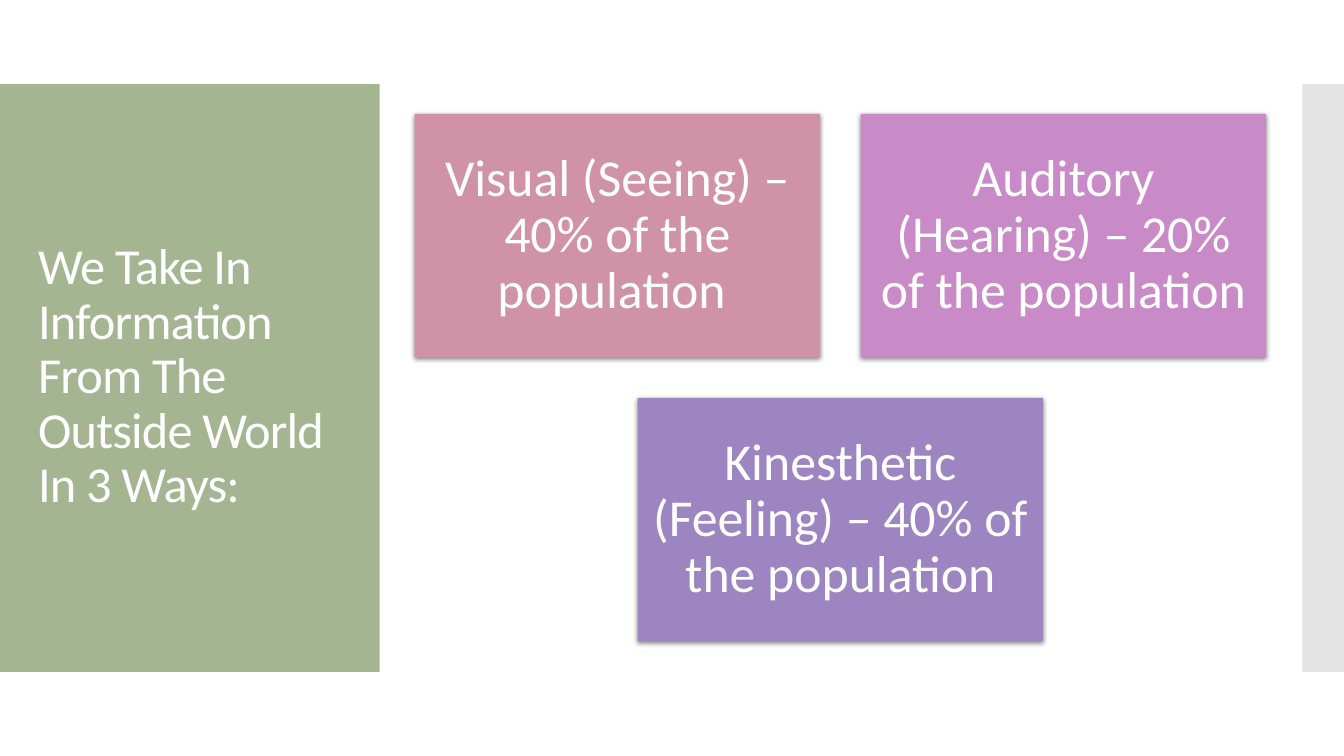
"""Build a slide on the three ways people take in information."""
import dataclasses

import lxml.etree
import pptx
import pptx.dml.color
import pptx.enum.shapes
import pptx.enum.text
import pptx.oxml.ns
import pptx.util

Pt = pptx.util.Pt
qn = pptx.oxml.ns.qn


@dataclasses.dataclass(frozen=True)
class Theme:
    font: str = "Calibri"
    title_size: int = 36
    card_size: int = 37
    text: str = "FFFFFF"
    panel: str = "A5B592"
    edge: str = "C8C8C8"
    shadow: str = "000000"
    visual: str = "D092A7"
    auditory: str = "C88BC7"
    kinesthetic: str = "9C85C0"


class SlideBuilder:
    def __init__(self, s, theme):
        self.s = s
        self.theme = theme

    def set_text(self, sp, text, size, align, inset_x, inset_y):
        tf = sp.text_frame
        tf.word_wrap = True
        tf.auto_size = pptx.enum.text.MSO_AUTO_SIZE.NONE
        tf.vertical_anchor = pptx.enum.text.MSO_ANCHOR.MIDDLE
        tf.margin_left = tf.margin_right = Pt(inset_x)
        tf.margin_top = tf.margin_bottom = Pt(inset_y)
        p = tf.paragraphs[0]
        p.alignment = align
        p.line_spacing = 0.9
        r = p.add_run()
        r.text = text
        r.font.name = self.theme.font
        r.font.size = Pt(size)
        r.font.color.rgb = pptx.dml.color.RGBColor.from_string(self.theme.text)

    def title(self, text, x, y, w, h):
        sp = self.s.shapes.title
        sp.element.getparent().append(sp.element)
        sp.left, sp.top, sp.width, sp.height = Pt(x), Pt(y), Pt(w), Pt(h)
        self.set_text(sp, text, self.theme.title_size,
                      pptx.enum.text.PP_ALIGN.LEFT, 7.2, 3.6)
        for rPr in sp.element.iter(qn("a:rPr")):
            rPr.set("spc", "-60")

    def rect(self, x, y, w, h, color, alpha=None):
        sp = self.s.shapes.add_shape(
            pptx.enum.shapes.MSO_SHAPE.RECTANGLE, Pt(x), Pt(y), Pt(w), Pt(h))
        sp.fill.solid()
        sp.fill.fore_color.rgb = pptx.dml.color.RGBColor.from_string(color)
        sp.line.fill.background()
        sp.shadow.inherit = False
        if alpha is not None:
            self.add_alpha(next(sp.element.iter(qn("a:srgbClr"))), alpha)
        return sp

    def add_alpha(self, clr, percent):
        lxml.etree.SubElement(clr, qn("a:alpha"), val=str(percent * 1000))

    def card(self, text, x, y, w, h, color):
        sp = self.rect(x, y, w, h, color)
        effects = next(sp.element.iter(qn("a:effectLst")))
        shadow = lxml.etree.SubElement(
            effects, qn("a:outerShdw"), blurRad=str(Pt(3.5)),
            dist=str(Pt(1.1)), dir="5400000", rotWithShape="0")
        clr = lxml.etree.SubElement(shadow, qn("a:srgbClr"), val=self.theme.shadow)
        self.add_alpha(clr, 45)
        self.set_text(sp, text, self.theme.card_size,
                      pptx.enum.text.PP_ALIGN.CENTER, 10.8, 10.8)


def main():
    theme = Theme()
    prs = pptx.Presentation()
    prs.slide_width, prs.slide_height = Pt(960), Pt(540)
    b = SlideBuilder(prs.slides.add_slide(prs.slide_layouts[5]), theme)

    b.rect(0, 60, 271.2, 420, theme.panel)
    b.rect(930.2, 60, 29.8, 420, theme.edge, alpha=50)
    b.title("We Take In Information From The Outside World In 3 Ways:",
            20, 88.5, 232, 362)

    rows = [
        [("Visual (Seeing) – 40% of the population ", theme.visual),
         ("Auditory (Hearing) – 20% of the population ", theme.auditory)],
        [("Kinesthetic (Feeling) – 40% of the population", theme.kinesthetic)],
    ]
    center, top, w, h, gap = 600.3, 81.4, 289.6, 173.8, 29
    for i, row in enumerate(rows):
        left = center - (len(row) * (w + gap) - gap) / 2
        for j, (text, color) in enumerate(row):
            b.card(text, left + j * (w + gap), top + i * (h + gap), w, h, color)

    prs.save("out.pptx")


if __name__ == "__main__":
    main()
